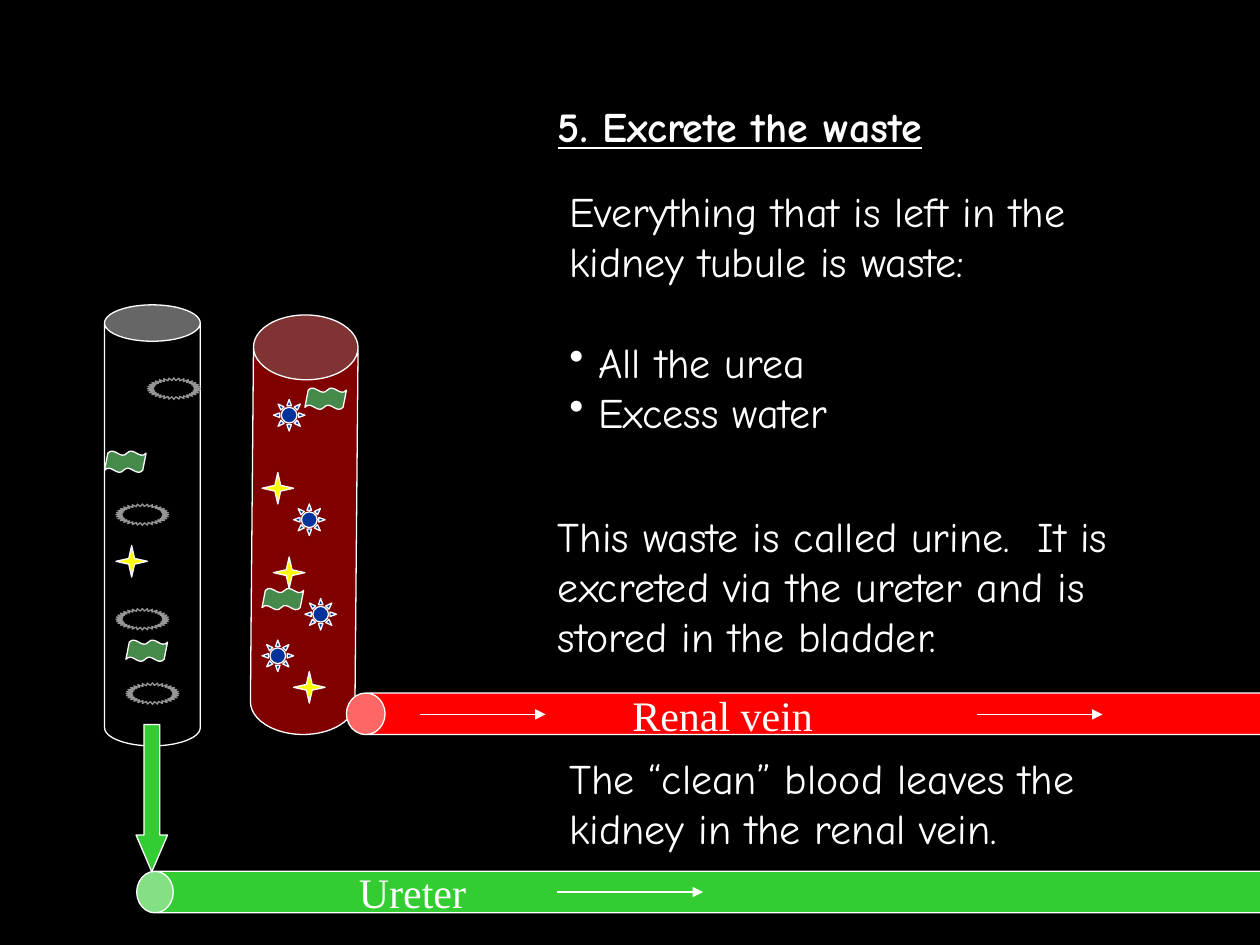
"""Build the slide on excreting waste from the kidney."""
from lxml.etree import SubElement as Sub
from pptx import Presentation
from pptx.dml.color import RGBColor
from pptx.enum.shapes import MSO_CONNECTOR as Link, MSO_SHAPE as Kind
from pptx.oxml.ns import qn
from pptx.util import Inches, Pt

WHITE, BLACK, GREEN = "FFFFFF", "000000", "33CC33"
COMIC = {"name": "Comic Neue", "size": Pt(24), "bold": False, "underline": False}
TITLE = {**COMIC, "bold": True, "underline": True}
ROMAN = {**COMIC, "name": "Times New Roman"}

TUBES = [
    (Kind.CAN, (0.83, 2.42, 0.76, 3.5), 0, [0.38], BLACK, 100),
    (Kind.CAN, (2, 2.5, 0.83, 3.33), 0.5, [0.62], "FF0000", 50),
]
PIPES = [
    (Kind.DOWN_ARROW, (1.08, 5.75, 0.25, 1.17), 0, [0.5, 1.17], GREEN, 100),
    (Kind.CAN, (6.42, 1.83, 0.33, 7.67), 270, [0.93], "FF0000", 100),
    (Kind.CAN, (5.46, 2.54, 0.33, 9.08), 270, [0.88], GREEN, 100),
]
BITS = [
    (Kind.DOUBLE_WAVE, (0.33, 0.17), [0.1, -0.04], "468A4B", WHITE,
     [(1, 5.08), (0.83, 3.58), (2.08, 4.67), (2.42, 3.08)]),
    (Kind.STAR_32_POINT, (0.42, 0.17), [0.38], BLACK, "969696",
     [(0.92, 4.83), (1, 5.42), (0.92, 4), (1.17, 3)]),
    (Kind.SUN, (0.25, 0.25), [0.25], "003399", WHITE,
     [(2.17, 3.17), (2.33, 4), (2.08, 5.08), (2.42, 4.75)]),
    (Kind.STAR_4_POINT, (0.25, 0.25), [0.13], "FFFF00", WHITE,
     [(0.92, 4.33), (2.08, 3.75), (2.17, 4.42), (2.33, 5.33)]),
]
TEXTS = [
    ((4.33, 0.75, 5.08, 0.5), TITLE, ["5. Excrete the waste"], []),
    ((4.42, 1.42, 5.08, 2.1), COMIC,
     ["Everything that is left in the kidney tubule is waste:"],
     ["All the urea", "Excess water"]),
    ((4.33, 4, 5.18, 1.3), COMIC,
     ["This waste is called urine.  It is excreted via the ureter "
      "and is stored in the bladder."], []),
    ((4.42, 5.92, 5.18, 0.9), COMIC,
     ["The “clean” blood leaves the kidney in the renal vein."], []),
    ((4.92, 5.42, 2.08, 0.5), ROMAN, ["Renal vein"], []),
    ((2.75, 6.83, 1.05, 0.5), ROMAN, ["Ureter"], []),
]
FLOWS = [(3.33, 4.33, 5.67), (7.75, 8.75, 5.67), (4.42, 5.58, 7.08)]


def paint(fill, tint):
    fill.solid()
    fill.fore_color.rgb = RGBColor.from_string(tint)


def draw(kind, box, turn, bends, tint, alpha=100, edge=WHITE):
    shape = shapes.add_shape(kind, *map(Inches, box))
    shape.rotation = turn
    shape.shadow.inherit = False
    for i, bend in enumerate(bends):
        shape.adjustments[i] = bend
    paint(shape.fill, tint)
    if alpha < 100:
        node = shape.fill._xPr.find(".//" + qn("a:srgbClr"))
        Sub(node, qn("a:alpha"), val=str(alpha * 1000))
    paint(shape.line.fill, edge)
    shape.line.width = Pt(0.75)


def write(box, style, plain, bullets):
    frame = shapes.add_textbox(*map(Inches, box)).text_frame
    frame.word_wrap = True
    for i, line in enumerate(plain + bullets):
        para = frame.paragraphs[0] if i == 0 else frame.add_paragraph()
        run = para.add_run()
        run.text = line
        for key, val in style.items():
            setattr(run.font, key, val)
        paint(run.font.fill, WHITE)
        if line in bullets:
            para.space_before = Pt(28.8 if line == bullets[0] else 0)
            props = para._p.get_or_add_pPr()
            props.set("marL", str(Inches(0.23)))
            props.set("indent", str(-Inches(0.23)))
            Sub(props, qn("a:buChar"), char="•")


def flow(left, right, y):
    line = shapes.add_connector(Link.STRAIGHT, *map(Inches, (left, y, right, y)))
    paint(line.line.fill, WHITE)
    line.line.width = Pt(0.75)
    Sub(line.line._get_or_add_ln(), qn("a:tailEnd"), type="triangle")
    Sub(line._element.spPr, qn("a:effectLst"))


deck = Presentation()
deck.slide_width, deck.slide_height = Inches(10), Inches(7.5)
slide = deck.slides.add_slide(deck.slide_layouts[6])
shapes = slide.shapes
paint(slide.background.fill, BLACK)

for tube in TUBES:
    draw(*tube)
for kind, size, bends, tint, edge, spots in BITS:
    for spot in spots:
        draw(kind, spot + size, 0, bends, tint, edge=edge)
for pipe in PIPES:
    draw(*pipe)
for text in TEXTS:
    write(*text)
for path in FLOWS:
    flow(*path)

deck.save("out.pptx")
